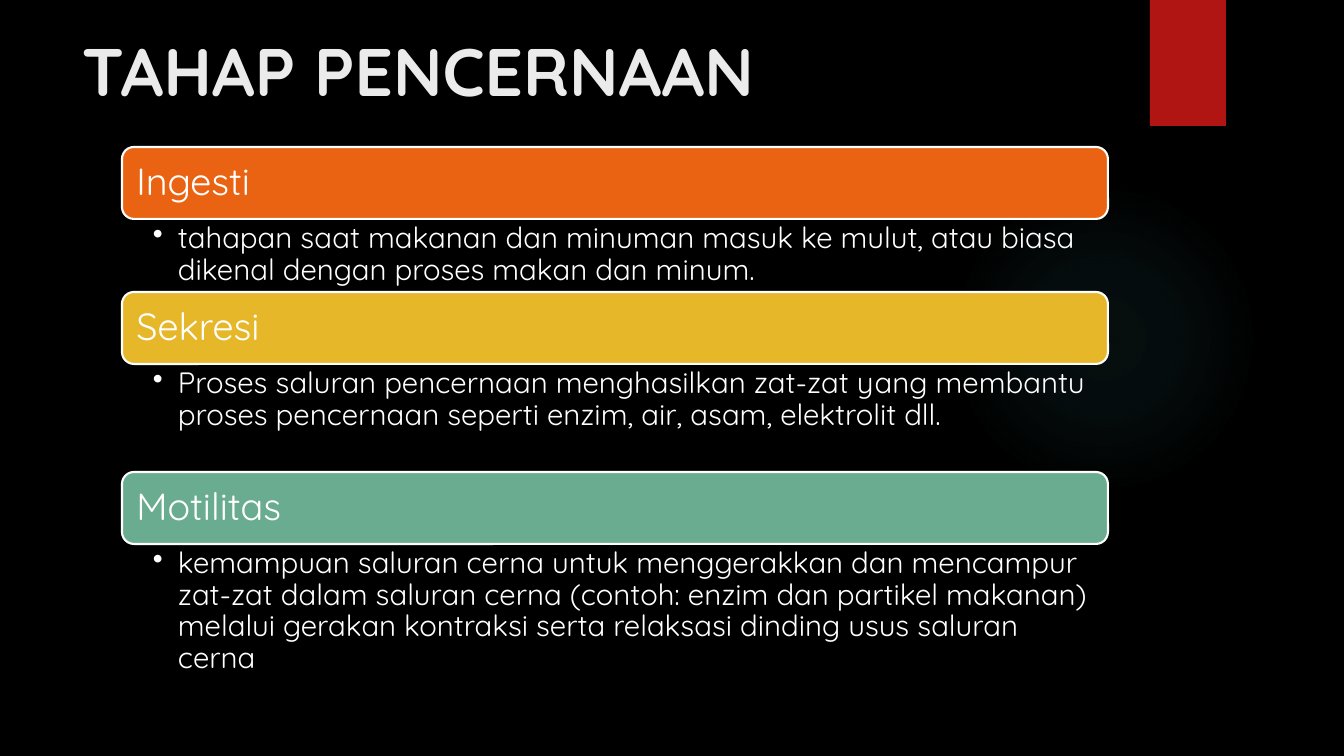
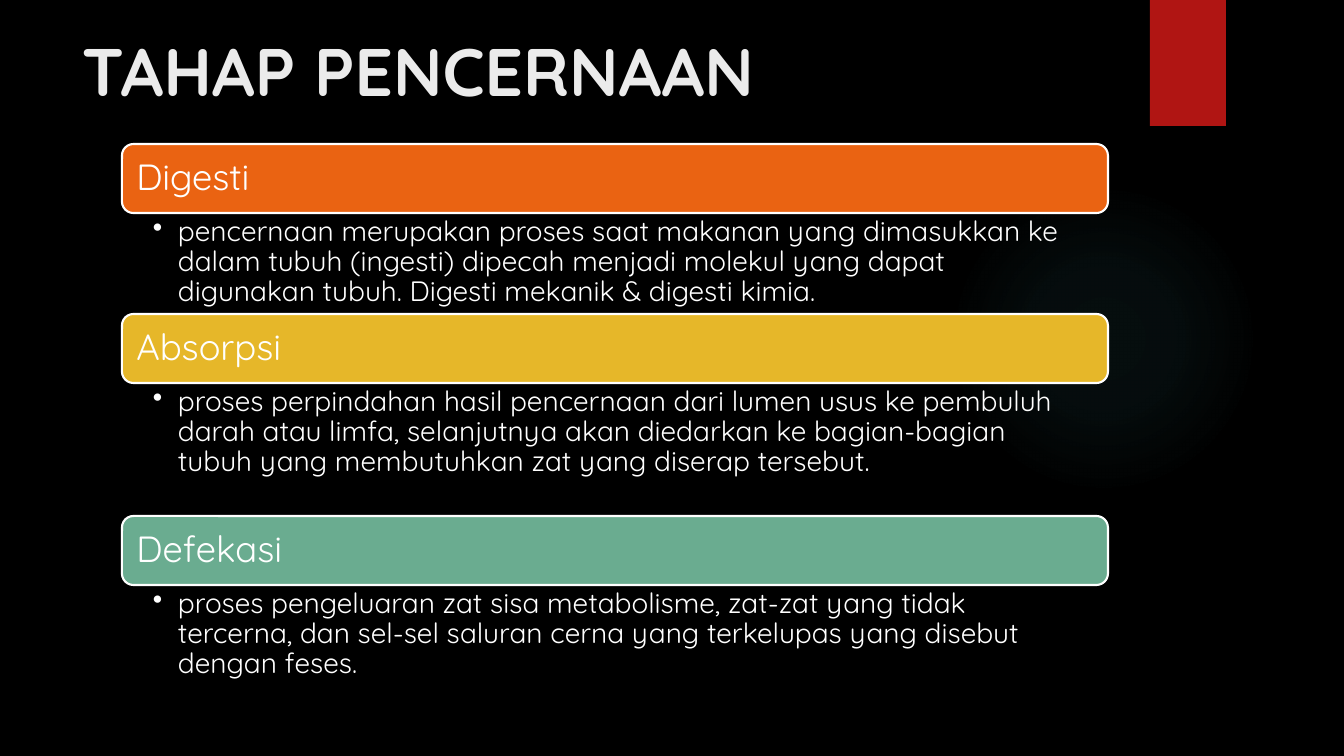
"""Build two slides on the stages of digestion."""
import pptx
import pptx.dml.color
import pptx.enum.shapes
import pptx.enum.text
import pptx.oxml
import pptx.oxml.ns
import pptx.util

SHAPE = pptx.enum.shapes.MSO_SHAPE
ANCHOR = pptx.enum.text.MSO_ANCHOR
ALIGN = pptx.enum.text.PP_ALIGN
SCALE = 914400 / 100.8
FONT = "Quicksand"
BLACK, WHITE, PALE, RED, GLOW = "000000", "FFFFFF", "EBEBEB", "B01513", "50B9C1"
COLORS = ["EA6312", "E6B729", "6AAC90"]
STOPS = [(0, 7), (36, 6), (69, 0)]
TITLE = "TAHAP PENCERNAAN"
LEFT, WIDTH = 122, 986

SLIDES = [
    {"top": 147, "bar": 72, "head": 27, "body": 21, "stages": [
        ("Ingesti", 73,
         "tahapan saat makanan dan minuman masuk ke mulut, atau biasa "
         "dikenal dengan proses makan dan minum."),
        ("Sekresi", 108,
         "Proses saluran pencernaan menghasilkan zat-zat yang membantu "
         "proses pencernaan seperti enzim, air, asam, elektrolit dll."),
        ("Motilitas", 139,
         "kemampuan saluran cerna untuk menggerakkan dan mencampur zat-zat "
         "dalam saluran cerna (contoh: enzim dan partikel makanan) melalui "
         "gerakan kontraksi serta relaksasi dinding usus saluran cerna"),
    ]},
    {"top": 144, "bar": 69, "head": 26, "body": 20, "stages": [
        ("Digesti", 101,
         "pencernaan merupakan proses saat makanan yang dimasukkan ke dalam "
         "tubuh (ingesti) dipecah menjadi molekul yang dapat digunakan tubuh. "
         "Digesti mekanik & digesti kimia."),
        ("Absorpsi", 133,
         "proses perpindahan hasil pencernaan dari lumen usus ke pembuluh "
         "darah atau limfa, selanjutnya akan diedarkan ke bagian-bagian "
         "tubuh yang membutuhkan zat yang diserap tersebut."),
        ("Defekasi", 101,
         "proses pengeluaran zat sisa metabolisme, zat-zat yang tidak "
         "tercerna, dan sel-sel saluran cerna yang terkelupas yang disebut "
         "dengan feses."),
    ]},
]


def px(n):
    return pptx.util.Emu(round(n * SCALE))


def rgb(code):
    return pptx.dml.color.RGBColor.from_string(code)


def shape(slide, kind, box, color, line=None):
    item = slide.shapes.add_shape(kind, *map(px, box))
    item.shadow.inherit = False
    item.fill.solid()
    item.fill.fore_color.rgb = rgb(color)
    if line:
        item.line.color.rgb = rgb(line)
        item.line.width = pptx.util.Pt(1.5)
    else:
        item.line.fill.background()
    return item


def write(item, text, size, color, pads, anchor=ANCHOR.TOP, bold=False,
          space=None, bullet=False):
    frame = item.text_frame
    frame.word_wrap = True
    frame.vertical_anchor = anchor
    (frame.margin_left, frame.margin_top,
     frame.margin_right, frame.margin_bottom) = map(px, pads)
    para = frame.paragraphs[0]
    para.text = text
    para.alignment = ALIGN.LEFT
    if space:
        para.line_spacing = space
    if bullet:
        props = para._p.get_or_add_pPr()
        props.set("marL", str(px(25)))
        props.set("indent", str(-px(25)))
        mark = pptx.oxml.parse_xml(
            f'<a:buChar {pptx.oxml.ns.nsdecls("a")} char="•"/>')
        props.append(mark)
    font = para.font
    font.name, font.size, font.bold = FONT, pptx.util.Pt(size), bold
    font.color.rgb = rgb(color)


def glow(slide):
    disc = shape(slide, SHAPE.OVAL, (949, 184, 310, 310), GLOW)
    stops = "".join(
        f'<a:gs pos="{pos * 1000}"><a:srgbClr val="{GLOW}">'
        f'<a:alpha val="{alpha * 1000}"/></a:srgbClr></a:gs>'
        for pos, alpha in STOPS)
    grad = pptx.oxml.parse_xml(
        f'<a:gradFill {pptx.oxml.ns.nsdecls("a")}><a:gsLst>{stops}</a:gsLst>'
        '<a:path path="circle"><a:fillToRect l="50000" t="50000" r="50000" '
        'b="50000"/></a:path></a:gradFill>')
    props = disc._element.spPr
    props.replace(props.find(pptx.oxml.ns.qn("a:solidFill")), grad)


def frame(deck):
    slide = deck.slides.add_slide(deck.slide_layouts[6])
    glow(slide)
    shape(slide, SHAPE.RECTANGLE, (1150, 0, 76, 126), RED)
    title = slide.shapes.add_textbox(*map(px, (72, 24, 1037, 87)))
    write(title, TITLE, 48, PALE, (10, 5, 10, 5), bold=True)
    return slide


def stack(slide, data):
    top, bar = data["top"], data["bar"]
    for (name, height, text), color in zip(data["stages"], COLORS):
        head = shape(slide, SHAPE.ROUNDED_RECTANGLE,
                     (LEFT, top, WIDTH, bar), color, WHITE)
        write(head, name, data["head"], WHITE, (11, 11, 11, 11),
              ANCHOR.MIDDLE, space=0.9)
        top += bar
        body = slide.shapes.add_textbox(*map(px, (LEFT, top, WIDTH, height)))
        write(body, text, data["body"], WHITE, (31, 4, 21, 4),
              space=0.9, bullet=True)
        top += height


def main():
    deck = pptx.Presentation()
    deck.slide_width, deck.slide_height = px(1344), px(756)
    back = deck.slide_master.background.fill
    back.solid()
    back.fore_color.rgb = rgb(BLACK)
    for data in SLIDES:
        stack(frame(deck), data)
    deck.save("out.pptx")


if __name__ == "__main__":
    main()
